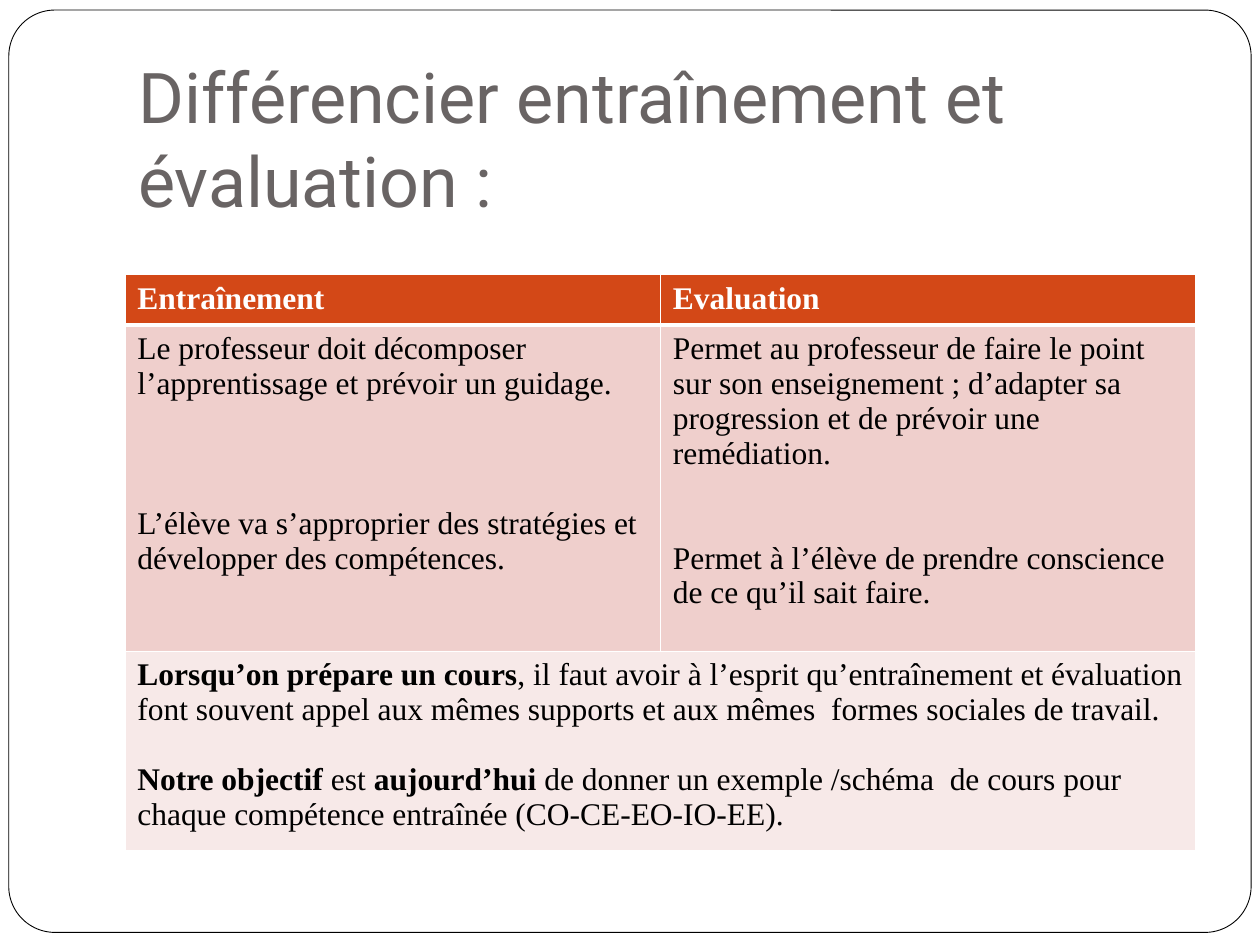
from lxml.etree import SubElement
from pptx import Presentation
from pptx.dml.color import RGBColor
from pptx.enum.shapes import MSO_SHAPE
from pptx.enum.text import MSO_ANCHOR
from pptx.oxml.ns import qn
from pptx.util import Inches, Pt

WHITE = RGBColor(0xFF, 0xFF, 0xFF)
BLACK = RGBColor(0, 0, 0)
GREY = RGBColor(0x69, 0x64, 0x64)
ORANGE = RGBColor(0xD3, 0x48, 0x17)
ROSE = RGBColor(0xEF, 0xCF, 0xCC)
PALE_ROSE = RGBColor(0xF7, 0xE9, 0xE8)

TITLE_FONT = "Roboto"
TABLE_FONT = "Times New Roman"
LINE = 20
COLUMN_WIDTH = 4.25
ROW_HEIGHTS = (0.4, 2.59, 1.48)

HEADERS = ("Entraînement", "Evaluation")
ROLES = (
    (
        (0, (("Le professeur doit décomposer l’apprentissage et prévoir un guidage.", False),)),
        (3, (("L’élève va s’approprier des stratégies et développer des compétences.", False),)),
    ),
    (
        (0, (("Permet au professeur de faire le point sur son enseignement ; d’adapter sa "
              "progression et de prévoir une remédiation.", False),)),
        (2, (("Permet à l’élève de prendre conscience de ce qu’il sait faire.", False),)),
    ),
)
CONCLUSION = (
    (0, (
        ("Lorsqu’on prépare un cours", True),
        (", il faut avoir à l’esprit qu’entraînement et évaluation font souvent appel "
         "aux mêmes supports et aux mêmes  formes sociales de travail.", False),
    )),
    (1, (
        ("Notre objectif ", True),
        ("est ", False),
        ("aujourd’hui", True),
        (" de donner un exemple /schéma  de cours pour chaque compétence entraînée "
         "(CO-CE-EO-IO-EE).", False),
    )),
)


def add_run(paragraph, text, font, size, color, bold=False):
    """Append one formatted run to a paragraph."""
    run = paragraph.add_run()
    run.text = text
    run.font.name = font
    run.font.size = Pt(size)
    run.font.bold = bold
    run.font.color.rgb = color


def add_frame(slide):
    """Draw the rounded outline around the slide."""
    frame = slide.shapes.add_shape(
        MSO_SHAPE.ROUNDED_RECTANGLE, Inches(0.07), Inches(0.08), Inches(9.86), Inches(7.32))
    frame.adjustments[0] = 0.05
    frame.shadow.inherit = False
    frame.fill.solid()
    frame.fill.fore_color.rgb = WHITE
    frame.line.color.rgb = BLACK
    frame.line.width = Pt(0.5)


def add_title(slide, text):
    """Write the slide title, anchored at the bottom of its box."""
    title = slide.shapes.add_textbox(Inches(1), Inches(0.3), Inches(8.5), Inches(1.56))
    text_frame = title.text_frame
    text_frame.word_wrap = True
    text_frame.vertical_anchor = MSO_ANCHOR.BOTTOM
    text_frame.margin_bottom = Inches(0.1)
    add_run(text_frame.paragraphs[0], text, TITLE_FONT, 40, GREY)


def set_borders(cell, top=1, bottom=1):
    """Give a cell white borders of the stated widths in points."""
    properties = cell._tc.get_or_add_tcPr()
    for side, width in (("L", 1), ("R", 1), ("T", top), ("B", bottom)):
        border = SubElement(properties, qn(f"a:ln{side}"), w=str(Pt(width)))
        fill = SubElement(border, qn("a:solidFill"))
        SubElement(fill, qn("a:srgbClr"), val=str(WHITE))


def fill_cell(cell, paragraphs, background, color=BLACK):
    """Colour a cell and write its paragraphs, each after a gap in lines."""
    cell.fill.solid()
    cell.fill.fore_color.rgb = background
    text_frame = cell.text_frame
    for index, (gap, runs) in enumerate(paragraphs):
        paragraph = text_frame.add_paragraph() if index else text_frame.paragraphs[0]
        paragraph.space_before = Pt(gap * LINE)
        for text, bold in runs:
            add_run(paragraph, text, TABLE_FONT, 18, color, bold)


def add_comparison(slide):
    """Build the two-column comparison with its merged conclusion."""
    table = slide.shapes.add_table(
        len(ROW_HEIGHTS), len(HEADERS), Inches(0.99), Inches(2.18),
        Inches(COLUMN_WIDTH * len(HEADERS)), Inches(sum(ROW_HEIGHTS))).table
    for row, height in zip(table.rows, ROW_HEIGHTS):
        row.height = Inches(height)
    for column, (header, role) in enumerate(zip(HEADERS, ROLES)):
        table.columns[column].width = Inches(COLUMN_WIDTH)
        set_borders(table.cell(0, column), bottom=3)
        set_borders(table.cell(1, column), top=3)
        set_borders(table.cell(2, column))
        fill_cell(table.cell(0, column), ((0, ((header, True),)),), ORANGE, WHITE)
        fill_cell(table.cell(1, column), role, ROSE)
    conclusion = table.cell(2, 0)
    conclusion.merge(table.cell(2, 1))
    fill_cell(conclusion, CONCLUSION, PALE_ROSE)


def main():
    """Create the presentation and save it."""
    presentation = Presentation()
    presentation.slide_width = Inches(10)
    presentation.slide_height = Inches(7.5)
    slide = presentation.slides.add_slide(presentation.slide_layouts[6])
    add_frame(slide)
    add_title(slide, "Différencier entraînement et évaluation :")
    add_comparison(slide)
    presentation.save("out.pptx")


if __name__ == "__main__":
    main()
